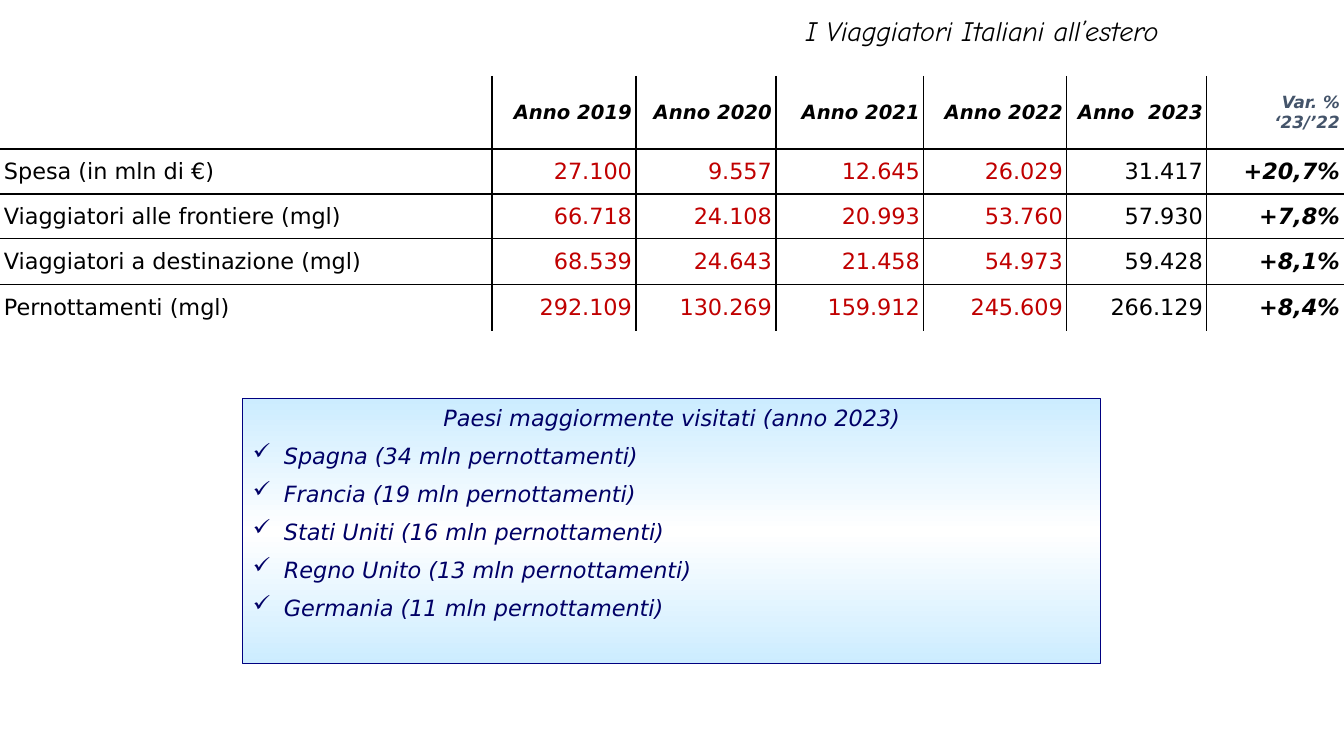
import copy

import lxml.etree
import pptx
import pptx.dml.color
import pptx.enum.shapes
import pptx.enum.text
import pptx.oxml.ns
import pptx.util

PX = 914400 / 100.8  # EMU per px
BLACK = pptx.dml.color.RGBColor(0x00, 0x00, 0x00)
RED = pptx.dml.color.RGBColor(0xC0, 0x00, 0x00)
SLATE = pptx.dml.color.RGBColor(0x44, 0x54, 0x6A)
NAVY = pptx.dml.color.RGBColor(0x00, 0x00, 0x80)
INDIGO = pptx.dml.color.RGBColor(0x00, 0x00, 0x66)
SKY = pptx.dml.color.RGBColor(0xCC, 0xEC, 0xFF)
WHITE = pptx.dml.color.RGBColor(0xFF, 0xFF, 0xFF)
ALIGN = pptx.enum.text.PP_ALIGN
ANCHOR = pptx.enum.text.MSO_ANCHOR
qn = pptx.oxml.ns.qn


def px(length):
    return pptx.util.Emu(round(length * PX))


def write(para, text, size=16, color=BLACK, font="DejaVu Sans",
          bold=False, italic=False, align=ALIGN.LEFT, before=0):
    para.alignment = align
    para.space_before = pptx.util.Pt(before)
    span = para.add_run()
    span.text = text
    span.font.size = pptx.util.Pt(size)
    span.font.name = font
    span.font.bold = bold
    span.font.italic = italic
    span.font.color.rgb = color


deck = pptx.Presentation()
deck.slide_width, deck.slide_height = px(1344), px(756)
page = deck.slides.add_slide(deck.slide_layouts[5])

# Title
title = page.shapes.title
title.left, title.top, title.width, title.height = px(723), px(8), px(446), px(43)
title.text_frame.auto_size = pptx.enum.text.MSO_AUTO_SIZE.NONE
title.text_frame.vertical_anchor = ANCHOR.TOP
write(title.text_frame.paragraphs[0], "I Viaggiatori Italiani all’estero",
      size=20, font="Comic Neue", italic=True, align=ALIGN.RIGHT)

# Table of travel figures
HEADERS = ["", "Anno 2019", "Anno 2020", "Anno 2021", "Anno 2022", "Anno  2023", "Var. % ‘23/’22"]
FIGURES = [
    ["Spesa (in mln di €)", "27.100", "9.557", "12.645", "26.029", "31.417", "+20,7%"],
    ["Viaggiatori alle frontiere (mgl)", "66.718", "24.108", "20.993", "53.760", "57.930", "+7,8%"],
    ["Viaggiatori a destinazione (mgl)", "68.539", "24.643", "21.458", "54.973", "59.428", "+8,1%"],
    ["Pernottamenti (mgl)", "292.109", "130.269", "159.912", "245.609", "266.129", "+8,4%"],
]
rows = [HEADERS] + FIGURES
widths = [492, 144, 140, 148, 143, 140, 137]
heights = [73, 45, 45, 46, 46]
last_row, last_column = len(rows) - 1, len(widths) - 1
frame = page.shapes.add_table(len(rows), len(widths), px(0), px(76),
                              px(sum(widths)), px(sum(heights)))
table = frame.table
table.first_row = table.horz_banding = False
for column, width in zip(table.columns, widths):
    column.width = px(width)
for row, height in zip(table.rows, heights):
    row.height = px(height)

for r, texts in enumerate(rows):
    for c, text in enumerate(texts):
        cell = table.cell(r, c)
        cell.vertical_anchor = ANCHOR.MIDDLE
        cell.margin_left = cell.margin_right = px(4)
        cell.margin_top = cell.margin_bottom = px(5)

        # Inner grid lines only; the outer edges stay open
        edges = {"a:lnL": c > 0, "a:lnR": c < last_column,
                 "a:lnT": r > 0, "a:lnB": r < last_row}
        properties = cell._tc.get_or_add_tcPr()
        for tag, inner in edges.items():
            edge = lxml.etree.SubElement(properties, qn(tag), w="12192")
            if inner:
                paint = lxml.etree.SubElement(edge, qn("a:solidFill"))
                lxml.etree.SubElement(paint, qn("a:srgbClr"), val=str(BLACK))
            else:
                lxml.etree.SubElement(edge, qn("a:noFill"))
        cell.fill.background()

        if not text:
            continue
        strong = r == 0 or c == last_column
        size, color = 16, BLACK
        if r == 0:
            size, color = (12, SLATE) if c == last_column else (14, BLACK)
        elif 1 <= c <= 4:
            color = RED
        write(cell.text_frame.paragraphs[0], text, size=size, color=color,
              bold=strong, italic=strong, align=ALIGN.RIGHT if c else ALIGN.LEFT)

# Box of most visited countries
box = page.shapes.add_shape(pptx.enum.shapes.MSO_SHAPE.RECTANGLE,
                            px(243), px(399), px(858), px(265))
box.shadow.inherit = False
box.line.color.rgb = NAVY
box.line.width = pptx.util.Pt(0.75)
box.fill.gradient()
box.fill.gradient_angle = 90
first_stop = box._element.find(".//" + qn("a:gs"))
middle_stop = copy.deepcopy(first_stop)
middle_stop.set("pos", "50000")
first_stop.addnext(middle_stop)
for stop, color in zip(box.fill.gradient_stops, [SKY, WHITE, SKY]):
    stop.color.rgb = color

box.text_frame.word_wrap = True
box.text_frame.vertical_anchor = ANCHOR.TOP
write(box.text_frame.paragraphs[0], "Paesi maggiormente visitati (anno 2023)",
      color=INDIGO, italic=True, align=ALIGN.CENTER)

COUNTRIES = [("Spagna", 34), ("Francia", 19), ("Stati Uniti", 16),
             ("Regno Unito", 13), ("Germania", 11)]
for country, nights in COUNTRIES:
    para = box.text_frame.add_paragraph()
    layout = para._p.get_or_add_pPr()
    layout.set("marL", str(px(31)))
    layout.set("indent", str(-px(31)))
    tint = lxml.etree.SubElement(layout, qn("a:buClr"))
    lxml.etree.SubElement(tint, qn("a:srgbClr"), val=str(INDIGO))
    lxml.etree.SubElement(layout, qn("a:buChar"), char="✓")
    write(para, f"{country} ({nights} mln pernottamenti)", color=INDIGO,
          italic=True, align=ALIGN.JUSTIFY, before=8)

deck.save("out.pptx")
